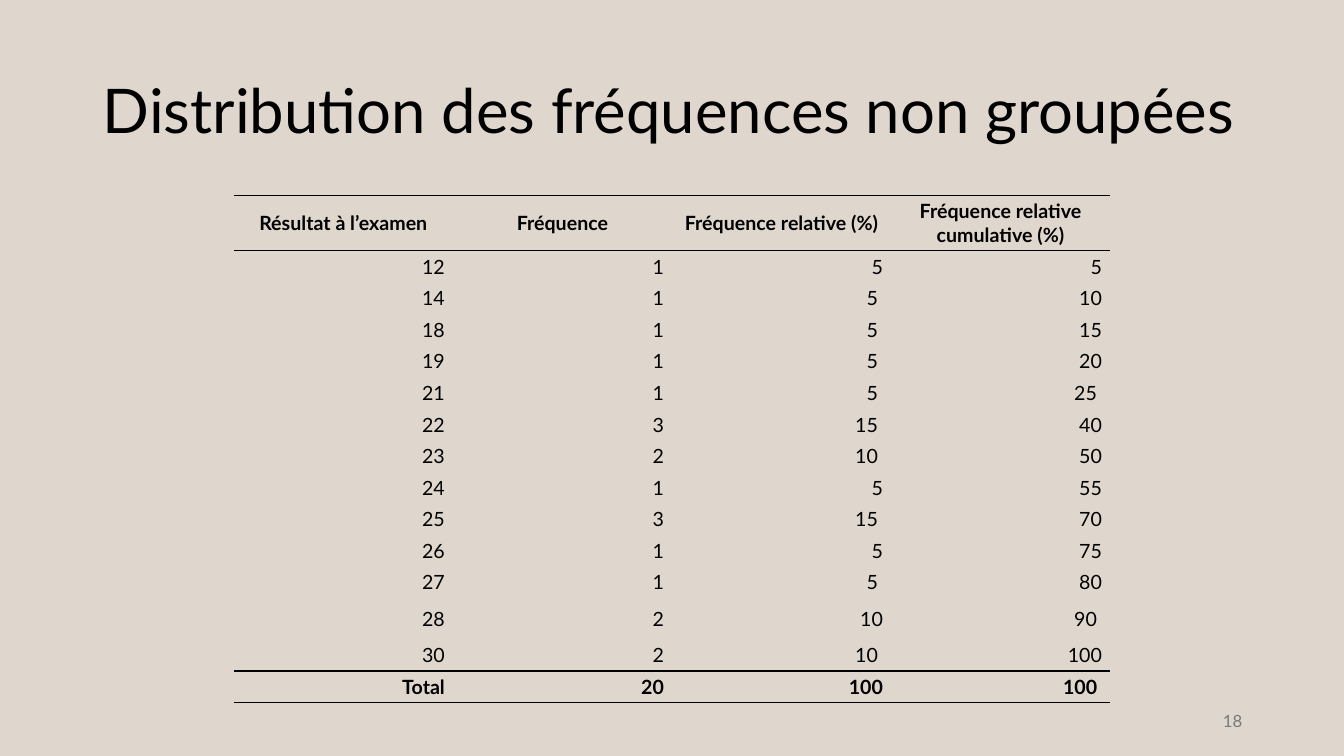
from lxml.etree import SubElement
from pptx import Presentation
from pptx.dml.color import RGBColor
from pptx.enum.text import MSO_ANCHOR, MSO_AUTO_SIZE, PP_ALIGN
from pptx.oxml.ns import qn
from pptx.util import Inches, Pt

BACKGROUND = RGBColor(0xDF, 0xD7, 0xCE)
BLACK = RGBColor(0x00, 0x00, 0x00)
GREY = RGBColor(0x79, 0x79, 0x79)
FONT = "Lato"
NO_STYLE_NO_GRID = "{2D5ABB26-0587-4C30-8999-92F81FD0307C}"

ROWS = [
    ("Résultat à l’examen", "Fréquence", "Fréquence relative (%)", "Fréquence relative cumulative (%)"),
    ("12", "1", "5", "5"),
    ("14", "1", "5 ", "10"),
    ("18", "1", "5 ", "15"),
    ("19", "1", "5 ", "20"),
    ("21", "1", "5 ", "25 "),
    ("22", "3", "15 ", "40"),
    ("23", "2", "10 ", "50"),
    ("24", "1", "5", "55"),
    ("25", "3", "15 ", "70"),
    ("26", "1", "5", "75"),
    ("27", "1", "5 ", "80"),
    ("28", "2", "10", "90 "),
    ("30", "2", "10 ", "100"),
    ("Total", "20", "100", "100 "),
]
HEADER, TALL, TOTAL = 0, 12, len(ROWS) - 1
ROW_HEIGHTS = {HEADER: 0.54, TALL: 0.41}


def write(text_frame, text, size, color=BLACK, bold=False, alignment=PP_ALIGN.LEFT):
    text_frame.word_wrap = True
    paragraph = text_frame.paragraphs[0]
    paragraph.alignment = alignment
    run = paragraph.add_run()
    run.text = text
    run.font.name = FONT
    run.font.size = Pt(size)
    run.font.bold = bold
    run.font.color.rgb = color
    return paragraph


def add_rules(cell):
    properties = cell._tc.get_or_add_tcPr()
    for side in ("a:lnT", "a:lnB"):
        line = SubElement(properties, qn(side), w=str(Pt(1)))
        fill = SubElement(line, qn("a:solidFill"))
        SubElement(fill, qn("a:srgbClr"), val=str(BLACK))


presentation = Presentation()
presentation.slide_width = Inches(13.33)
presentation.slide_height = Inches(7.5)
slide = presentation.slides.add_slide(presentation.slide_layouts[5])
slide.background.fill.solid()
slide.background.fill.fore_color.rgb = BACKGROUND

title = slide.shapes.title
title.left, title.top, title.width, title.height = map(Inches, (0.92, 0.4, 11.5, 1.45))
title.text_frame.auto_size = MSO_AUTO_SIZE.NONE
title.text_frame.vertical_anchor = MSO_ANCHOR.MIDDLE
write(title.text_frame, "Distribution des fréquences non groupées", 44).line_spacing = 0.9

page_number = slide.shapes.add_textbox(*map(Inches, (9.42, 6.95, 3, 0.4)))
page_number.text_frame.vertical_anchor = MSO_ANCHOR.MIDDLE
write(page_number.text_frame, "18", 12, GREY, alignment=PP_ALIGN.RIGHT)

frame = slide.shapes.add_table(len(ROWS), len(ROWS[0]), *map(Inches, (2.32, 1.94, 8.69, 4.97)))
table = frame.table
table.first_row = False
table.horz_banding = False
table._tbl.tblPr.find(qn("a:tableStyleId")).text = NO_STYLE_NO_GRID

for row_index, values in enumerate(ROWS):
    table.rows[row_index].height = Inches(ROW_HEIGHTS.get(row_index, 0.31))
    emphasized = row_index in (HEADER, TOTAL)
    alignment = PP_ALIGN.CENTER if row_index == HEADER else PP_ALIGN.RIGHT
    for column_index, value in enumerate(values):
        cell = table.cell(row_index, column_index)
        cell.margin_left = cell.margin_right = Inches(0.08)
        cell.margin_top = cell.margin_bottom = Inches(0.04)
        cell.vertical_anchor = MSO_ANCHOR.MIDDLE
        if emphasized:
            add_rules(cell)
        cell.fill.background()
        write(cell.text_frame, value, 14, bold=emphasized, alignment=alignment)

presentation.save("out.pptx")
